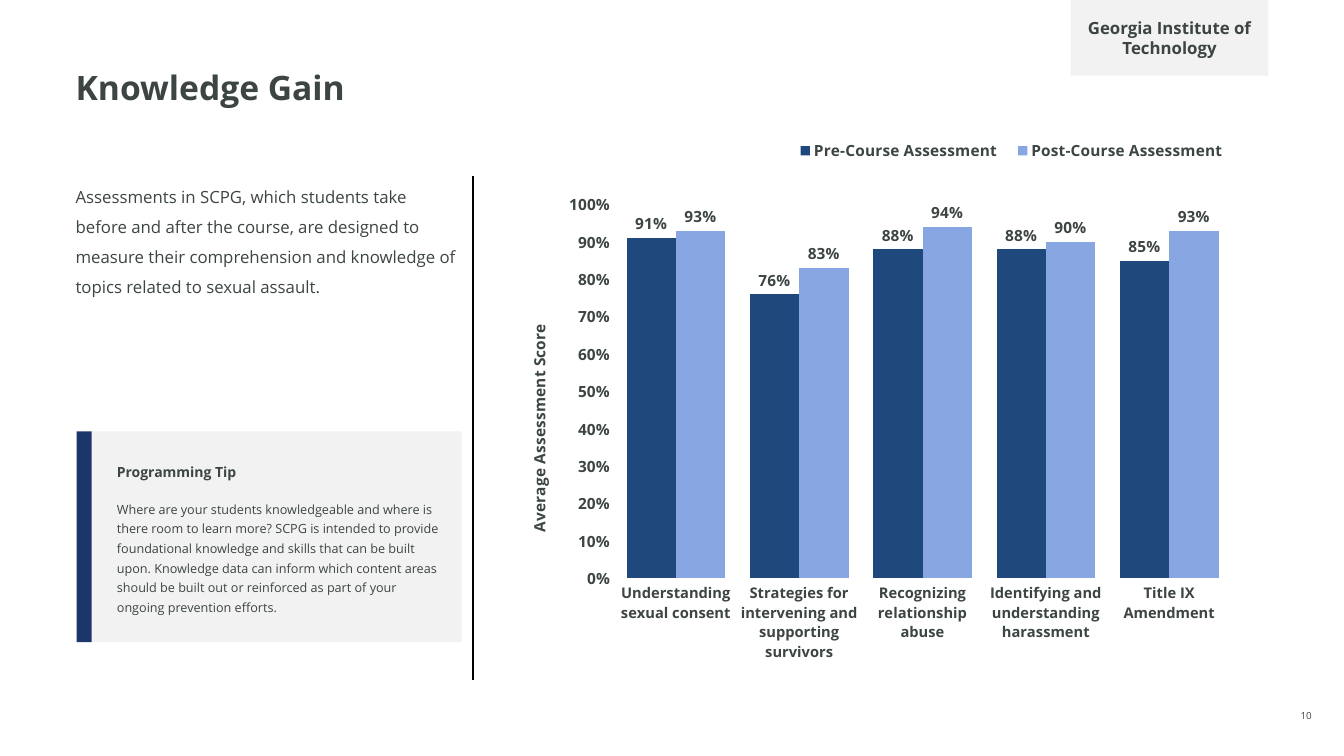
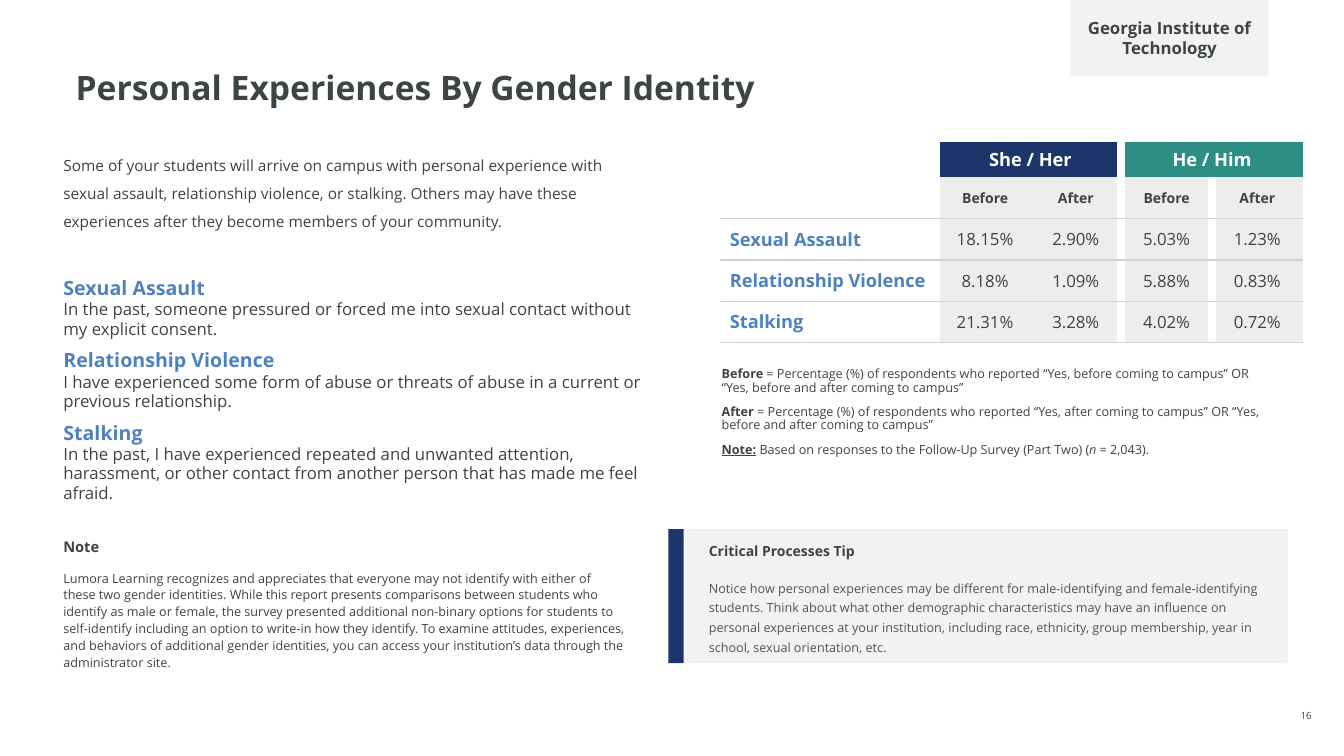
"""Build two report slides: knowledge gain and personal experiences by gender identity."""
from dataclasses import dataclass

from lxml.etree import SubElement
from pptx import Presentation
from pptx.chart.data import CategoryChartData
from pptx.dml.color import RGBColor
from pptx.enum.chart import XL_CHART_TYPE as ChartType, XL_LABEL_POSITION as LabelPosition
from pptx.enum.chart import XL_LEGEND_POSITION as LegendPosition, XL_TICK_MARK as TickMark
from pptx.enum.shapes import MSO_CONNECTOR as Connector, MSO_SHAPE as Shape
from pptx.enum.text import MSO_ANCHOR as Anchor, MSO_AUTO_SIZE as AutoSize, PP_ALIGN as Align
from pptx.oxml import parse_xml
from pptx.oxml.ns import nsdecls, qn
from pptx.util import Emu, Pt


@dataclass(frozen=True)
class Theme:
    font: str = "Open Sans"
    ink: str = "3C4543"
    soft_ink: str = "4C5758"
    white: str = "FFFFFF"
    black: str = "000000"
    panel: str = "F2F2F2"
    navy: str = "1C366B"
    teal: str = "2D8F83"
    blue: str = "4F81BD"
    before_bar: str = "1F497D"
    after_bar: str = "88A6E1"
    cell: str = "EDEDEC"
    rule: str = "D2D2D2"
    title: float = 24
    heading: float = 14
    label: float = 13
    body: float = 12
    intro: float = 11
    subhead: float = 10.5
    tip: float = 10
    small: float = 9
    footer: float = 7


THEME = Theme()
EMU_PER_PX = 9144
SLIDE_SIZE = (1333, 750)
TITLE_FRAME = (75, 71, 1183, 70)
SCHOOL = "Georgia Institute of Technology"
PLAIN_STYLE = "{2D5ABB26-0587-4C30-8999-92F81FD0307C}"

KNOWLEDGE = {
    "title": "Knowledge Gain",
    "number": "10",
    "intro": "Assessments in SCPG, which students take before and after the course, are designed to "
             "measure their comprehension and knowledge of topics related to sexual assault.",
    "tip": ("Programming Tip",
            "Where are your students knowledgeable and where is there room to learn more? SCPG is "
            "intended to provide foundational knowledge and skills that can be built upon. Knowledge "
            "data can inform which content areas should be built out or reinforced as part of your "
            "ongoing prevention efforts."),
    "axis": "Average Assessment Score",
    "topics": ["Understanding sexual consent", "Strategies for intervening and supporting survivors",
               "Recognizing relationship abuse", "Identifying and understanding harassment",
               "Title IX Amendment"],
    "scores": [("Pre-Course Assessment", (0.91, 0.76, 0.88, 0.88, 0.85), THEME.before_bar),
               ("Post-Course Assessment", (0.93, 0.83, 0.94, 0.9, 0.93), THEME.after_bar)],
}

EXPERIENCES = {
    "title": "Personal Experiences By Gender Identity",
    "number": "16",
    "intro": "Some of your students will arrive on campus with personal experience with sexual assault, "
             "relationship violence, or stalking. Others may have these experiences after they become "
             "members of your community.",
    "definitions": [
        ("Sexual Assault", "In the past, someone pressured or forced me into sexual contact without my "
                           "explicit consent."),
        ("Relationship Violence", "I have experienced some form of abuse or threats of abuse in a "
                                  "current or previous relationship."),
        ("Stalking", "In the past, I have experienced repeated and unwanted attention, harassment, or "
                     "other contact from another person that has made me feel afraid."),
    ],
    "note": ("Note",
             "Lumora Learning recognizes and appreciates that everyone may not identify with either of "
             "these two gender identities. While this report presents comparisons between students who "
             "identify as male or female, the survey presented additional non-binary options for "
             "students to self-identify including an option to write-in how they identify. To examine "
             "attitudes, experiences, and behaviors of additional gender identities, you can access "
             "your institution’s data through the administrator site."),
    "tip": ("Critical Processes Tip",
            "Notice how personal experiences may be different for male-identifying and "
            "female-identifying students. Think about what other demographic characteristics may have "
            "an influence on personal experiences at your institution, including race, ethnicity, "
            "group membership, year in school, sexual orientation, etc."),
    "groups": [("She / Her", THEME.navy), ("He / Him", THEME.teal)],
    "periods": ["Before", "After"],
    "rates": [("Sexual Assault", "18.15%", "2.90%", "5.03%", "1.23%"),
              ("Relationship Violence", "8.18%", "1.09%", "5.88%", "0.83%"),
              ("Stalking", "21.31%", "3.28%", "4.02%", "0.72%")],
    "legend": [
        [("Before", {"bold": True}), (" = Percentage (%) of respondents who reported “Yes, before coming "
                                      "to campus” OR “Yes, before and after coming to campus”", {})],
        [("After", {"bold": True}), (" = Percentage (%) of respondents who reported “Yes, after coming to "
                                     "campus” OR “Yes, before and after coming to campus”", {})],
        [("Note:", {"bold": True, "underline": True}),
         (" Based on responses to the Follow-Up Survey (Part Two) (", {}), ("n", {"italic": True}),
         (" = 2,043).", {})],
    ],
}


def px(*lengths):
    return [Emu(length * EMU_PER_PX) for length in lengths]


def rgb(color):
    return RGBColor.from_string(color)


def style(font, size, color=THEME.ink, bold=False, italic=None, underline=None):
    font.name, font.size, font.bold = THEME.font, Pt(size), bold
    font.italic, font.underline = italic, underline
    font.color.rgb = rgb(color)


def write(frame, paragraphs, align=Align.LEFT, anchor=Anchor.TOP, insets=None, spacing=None,
          before=0, after=0, **font):
    """Fill a text frame; a paragraph is a string or a list of (text, font changes) spans."""
    frame.word_wrap, frame.auto_size, frame.vertical_anchor = True, AutoSize.NONE, anchor
    if insets is not None:
        frame.margin_left, frame.margin_top, frame.margin_right, frame.margin_bottom = px(*insets)
    for index, spans in enumerate(paragraphs):
        para = frame.add_paragraph() if index else frame.paragraphs[0]
        para.alignment, para.line_spacing = align, spacing
        para.space_before, para.space_after = Pt(before if index else 0), Pt(after)
        for text, changes in [(spans, {})] if isinstance(spans, str) else spans:
            span = para.add_run()
            span.text = text.rstrip("\n")
            style(span.font, **{**font, **changes})
            if text.endswith("\n"):
                para.add_line_break()


def add_text(page, bounds, paragraphs, **options):
    write(page.shapes.add_textbox(*px(*bounds)).text_frame, paragraphs, **options)


def add_panel(shapes, bounds, color):
    panel = shapes.add_shape(Shape.RECTANGLE, *px(*bounds))
    panel.shadow.inherit = False
    panel.fill.solid()
    panel.fill.fore_color.rgb = rgb(color)
    panel.line.fill.background()
    return panel


def add_page(deck, content):
    page = deck.slides.add_slide(deck.slide_layouts[5])
    title = page.shapes.title
    title.left, title.top, title.width, title.height = px(*TITLE_FRAME)
    write(title.text_frame, [content["title"]], insets=(0, 0, 0, 0), spacing=0.9,
          size=THEME.title, bold=True)
    badge = add_panel(page.shapes, (1062, 0, 196, 75), THEME.panel)
    write(badge.text_frame, [SCHOOL], align=Align.CENTER, anchor=Anchor.MIDDLE,
          insets=(10, 0, 10, 0), size=THEME.body, bold=True)
    add_text(page, (1270, 701, 51, 15), [content["number"]], align=Align.CENTER,
             anchor=Anchor.BOTTOM, insets=(0, 0, 0, 0), size=THEME.footer)
    return page


def add_tip(page, bounds, tip, color=THEME.ink, bar_width=15):
    left, top, width, height = bounds
    heading, advice = tip
    group = page.shapes.add_group_shape()
    panel = add_panel(group.shapes, (left + bar_width, top, width - bar_width, height), THEME.panel)
    write(panel.text_frame, [[(heading, {"size": THEME.tip, "bold": True, "color": THEME.ink})], advice],
          anchor=Anchor.MIDDLE, insets=(25, 0, 22, 0), spacing=1.3, before=12,
          size=THEME.small, color=color)
    add_panel(group.shapes, (left, top, bar_width, height), THEME.navy)


def place(parent, index, target=None, **position):
    """Give a chart part a manual layout in fractions of the chart."""
    for old in parent.findall(qn("c:layout")):
        parent.remove(old)
    layout = parse_xml(f"<c:layout {nsdecls('c')}><c:manualLayout/></c:layout>")
    if target:
        SubElement(layout[0], qn("c:layoutTarget")).set("val", target)
    for name in ("xMode", "yMode"):
        SubElement(layout[0], qn(f"c:{name}")).set("val", "edge")
    for name, value in position.items():
        SubElement(layout[0], qn(f"c:{name}")).set("val", str(value))
    parent.insert(index, layout)


def add_score_chart(page, bounds, content):
    data = CategoryChartData(number_format="0%")
    data.categories = content["topics"]
    for name, values, _ in content["scores"]:
        data.add_series(name, values)
    chart = page.shapes.add_chart(ChartType.COLUMN_CLUSTERED, *px(*bounds), data).chart
    style(chart.font, THEME.intro)
    chart.has_title = False
    chart.has_legend = True
    chart.legend.position, chart.legend.include_in_layout = LegendPosition.TOP, False
    style(chart.legend.font, THEME.intro, bold=True)
    plot = chart.plots[0]
    plot.gap_width, plot.overlap, plot.vary_by_categories = 50, 0, False
    for series, (_, _, color) in zip(plot.series, content["scores"]):
        series.format.fill.solid()
        series.format.fill.fore_color.rgb = rgb(color)
        labels = series.data_labels
        labels.show_value, labels.position = True, LabelPosition.OUTSIDE_END
        labels.number_format, labels.number_format_is_linked = "0%", False
        style(labels.font, THEME.intro, bold=True)
    for axis, size in ((chart.category_axis, THEME.subhead), (chart.value_axis, THEME.intro)):
        axis.has_major_gridlines = False
        axis.major_tick_mark = TickMark.NONE
        axis.format.line.fill.background()
        style(axis.tick_labels.font, size, bold=True)
    scale = chart.value_axis
    scale.minimum_scale, scale.maximum_scale, scale.major_unit = 0, 1, 0.1
    scale.tick_labels.number_format, scale.tick_labels.number_format_is_linked = "0%", False
    heading = scale.axis_title.text_frame.paragraphs[0].add_run()
    heading.text = content["axis"]
    style(heading.font, THEME.intro, bold=True)
    root = chart.element
    place(root.find(".//" + qn("c:plotArea")), 0, "inner", x=0.14, y=0.16, w=0.83, h=0.66)
    place(root.find(".//" + qn("c:legend")), 1, x=0.37, y=0.03, w=0.61, h=0.07)


def set_borders(cell, **edges):
    properties = cell._tc.get_or_add_tcPr()
    sides = [side for side in "LRTB" if side in edges]
    for index, side in enumerate(sides):
        color, width = edges[side]
        properties.insert(index, parse_xml(
            f'<a:ln{side} {nsdecls("a")} w="{Pt(width)}"><a:solidFill><a:srgbClr val="{color}"/>'
            f"</a:solidFill></a:ln{side}>"))


def add_rate_table(page, left, top, content):
    widths, heights = [218] + [90] * 4, [35] + [41] * 4
    periods, groups = content["periods"], content["groups"]
    rows = [[""] + [name if not slot else "" for name, _ in groups for slot in range(len(periods))],
            [""] + periods * len(groups), *content["rates"]]
    table = page.shapes.add_table(len(rows), len(widths),
                                  *px(left, top, sum(widths), sum(heights))).table
    table.first_row = table.horz_banding = False
    table._tbl.tblPr.find(qn("a:tableStyleId")).text = PLAIN_STYLE
    for column, width in zip(table.columns, px(*widths)):
        column.width = width
    for row, height in zip(table.rows, px(*heights)):
        row.height = height
    table.cell(0, 0).merge(table.cell(1, 0))
    for column in (1, 3):
        table.cell(0, column).merge(table.cell(0, column + 1))
    label = {"size": THEME.label, "color": THEME.blue, "bold": True}
    period = {"size": THEME.tip, "bold": True, "align": Align.CENTER}
    rate = {"size": THEME.body, "align": Align.CENTER}
    banner = {"size": THEME.label, "color": THEME.white, "bold": True, "align": Align.CENTER}
    rule, gutter = (THEME.rule, 1), (THEME.white, 6)
    for r, texts in enumerate(rows):
        for c, text in enumerate(texts):
            cell = table.cell(r, c)
            cell.vertical_anchor = Anchor.MIDDLE
            if text:
                look = banner if r == 0 else label if c == 0 else period if r == 1 else rate
                para = cell.text_frame.paragraphs[0]
                para.alignment = look.get("align", Align.LEFT)
                span = para.add_run()
                span.text = text
                style(span.font, **{key: look[key] for key in look if key != "align"})
            if c:
                cell.fill.solid()
                cell.fill.fore_color.rgb = rgb(THEME.cell if r else groups[(c - 1) // 2][1])
            edges = {"T": rule} if r > 1 else {}
            if r or not c:
                edges["B"] = rule
            if c == 2 or (r, c) == (0, 1):
                edges["R"] = gutter
            if c == 3:
                edges["L"] = gutter
            set_borders(cell, **edges)


def build_knowledge(deck, content):
    page = add_page(deck, content)
    add_text(page, (75, 175, 383, 147), [content["intro"]], insets=(0, 0, 0, 0), spacing=1.5,
             size=THEME.body)
    divider = page.shapes.add_connector(Connector.STRAIGHT, *px(469, 175, 469, 675))
    divider.line.color.rgb, divider.line.width = rgb(THEME.black), Pt(1)
    SubElement(divider._element.spPr, qn("a:effectLst"))
    add_tip(page, (76, 428, 382, 209), content["tip"])
    add_score_chart(page, (506, 113, 737, 562), content)


def build_experiences(deck, content):
    page = add_page(deck, content)
    add_text(page, (53, 141, 594, 98), [content["intro"]], spacing=1.5, size=THEME.intro)
    definitions = [[(term + "\n", {"size": THEME.heading, "color": THEME.blue, "bold": True}),
                    (meaning, {})] for term, meaning in content["definitions"]]
    add_text(page, (53, 273, 611, 238), definitions, spacing=Pt(14), before=7.5, after=2,
             size=THEME.body)
    heading, note = content["note"]
    add_text(page, (53, 533, 576, 133), [[(heading, {"size": THEME.subhead, "bold": True})], note],
             anchor=Anchor.MIDDLE, spacing=Pt(12), before=7.5, after=2, size=THEME.small)
    add_tip(page, (663, 525, 614, 133), content["tip"], color=THEME.soft_ink)
    add_rate_table(page, 714, 141, content)
    add_text(page, (706, 339, 563, 140), content["legend"], anchor=Anchor.MIDDLE, spacing=0.9,
             before=7.5, size=THEME.small)


def main():
    deck = Presentation()
    deck.slide_width, deck.slide_height = px(*SLIDE_SIZE)
    build_knowledge(deck, KNOWLEDGE)
    build_experiences(deck, EXPERIENCES)
    deck.save("out.pptx")


if __name__ == "__main__":
    main()
